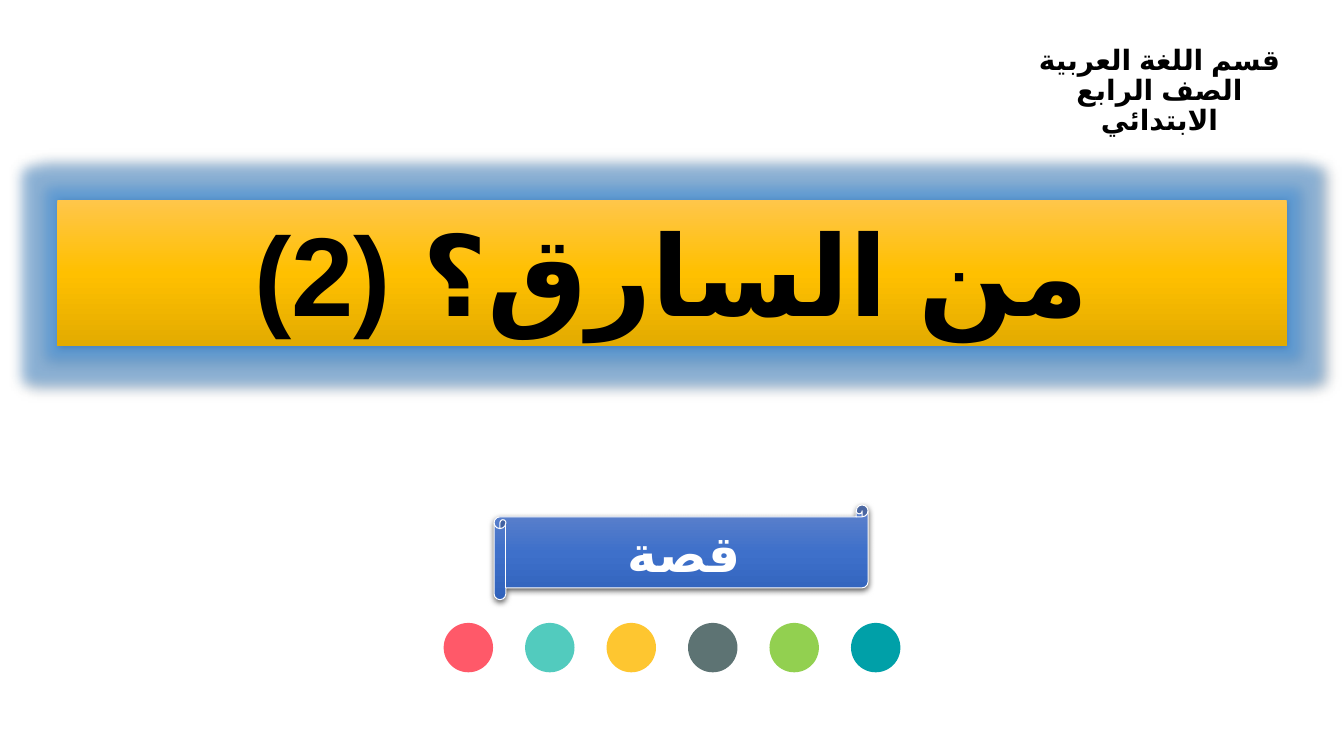
"""Build the Arabic story title slide."""
import dataclasses
import pptx
import pptx.dml.color
import pptx.enum.shapes
import pptx.enum.text
import pptx.oxml
import pptx.util
from pptx.util import Inches


@dataclasses.dataclass
class Theme:
    font: str = "Calibri"
    script: str = "Arial"
    black: str = "000000"
    white: str = "FFFFFF"
    glow: str = "3E9BF3"
    gold: tuple = ("FFC64B", "FFC000", "E3AB00")
    blue: tuple = ("6183CB", "3E70CA", "3062BB")
    dots: tuple = ("FF5969", "52CBBE", "FEC630", "5D7373", "92D050", "00A0A8")
    title: int = 80
    label: int = 36
    note: int = 20


theme = Theme()
rgb = pptx.dml.color.RGBColor.from_string
kinds = pptx.enum.shapes.MSO_SHAPE
anchor = pptx.enum.text.MSO_ANCHOR
space = 'xmlns:a="http://schemas.openxmlformats.org/drawingml/2006/main"'


def write(shape, text, size, color):
    frame = shape.text_frame
    frame.word_wrap = True
    frame.text = text
    for para in frame.paragraphs:
        para.alignment = pptx.enum.text.PP_ALIGN.CENTER
        for run in para.runs:
            run.font.name = theme.font
            run.font.size = pptx.util.Pt(size)
            run.font.bold = True
            run.font.color.rgb = rgb(color)
            props = run._r.get_or_add_rPr()
            props.set("lang", "ar-SA")
            props.append(pptx.oxml.parse_xml(
                f'<a:cs {space} typeface="{theme.script}"/>'))


def shade(shape, tones, glow=""):
    shape.fill.gradient()
    shape.fill.gradient_angle = 270
    stops = shape.fill._fill._gradFill.gsLst
    for stop in list(stops):
        stops.remove(stop)
    for i, tone in enumerate(tones):
        stops.append(pptx.oxml.parse_xml(
            f'<a:gs {space} pos="{i * 50000}"><a:srgbClr val="{tone}"/></a:gs>'))
    shape.shadow.inherit = False
    effects = shape._element.spPr.find(pptx.oxml.ns.qn("a:effectLst"))
    if glow:
        effects.append(pptx.oxml.parse_xml(
            f'<a:glow {space} rad="{Inches(0.25)}"><a:srgbClr val="{glow}">'
            '<a:alpha val="40000"/></a:srgbClr></a:glow>'))
    effects.append(pptx.oxml.parse_xml(
        f'<a:outerShdw {space} blurRad="{pptx.util.Pt(4.5)}" dist="{pptx.util.Pt(1.5)}" '
        f'dir="5400000" algn="ctr" rotWithShape="0"><a:srgbClr val="{theme.black}">'
        '<a:alpha val="63000"/></a:srgbClr></a:outerShdw>'))


deck = pptx.Presentation()
deck.slide_width = Inches(13.33)
deck.slide_height = Inches(7.5)
slide = deck.slides.add_slide(deck.slide_layouts[6])
shapes = slide.shapes

title = shapes.add_shape(
    kinds.RECTANGLE, Inches(0.57), Inches(1.98), Inches(12.19), Inches(1.45))
shade(title, theme.gold, theme.glow)
title.line.fill.background()
write(title, "من السارق؟ (2)", theme.title, theme.black)
title.text_frame.vertical_anchor = anchor.TOP

group = shapes.add_group_shape()
for i, color in enumerate(theme.dots):
    dot = group.shapes.add_shape(
        kinds.OVAL, Inches(4.4 + i * 0.808), Inches(6.18), Inches(0.49), Inches(0.49))
    dot.fill.solid()
    dot.fill.fore_color.rgb = rgb(color)
    dot.line.fill.background()
    dot.shadow.inherit = False

note = shapes.add_textbox(Inches(10.2), Inches(0.41), Inches(2.6), Inches(0.85))
write(note, "قسم اللغة العربية\nالصف الرابع الابتدائي", theme.note, theme.black)
for para in note.text_frame.paragraphs:
    para.line_spacing = 0.9
    para._p.get_or_add_pPr().set("rtl", "1")

scroll = shapes.add_shape(
    kinds.HORIZONTAL_SCROLL, Inches(4.9), Inches(5.01), Inches(3.71), Inches(0.94))
shade(scroll, theme.blue)
scroll.line.color.rgb = rgb(theme.white)
scroll.line.width = pptx.util.Pt(0.75)
write(scroll, "قصة", theme.label, theme.white)
scroll.text_frame.vertical_anchor = anchor.MIDDLE

deck.save("out.pptx")
